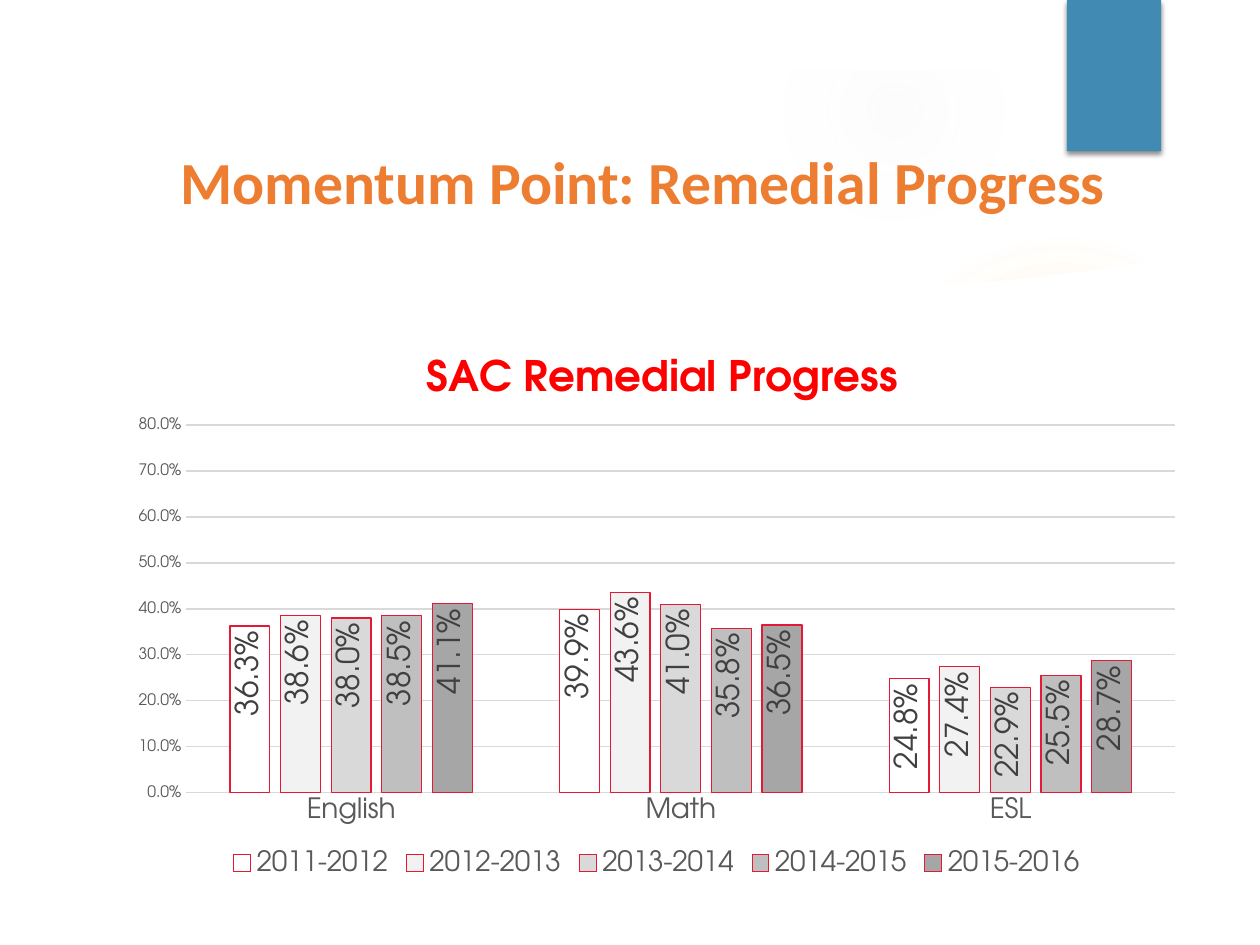
from dataclasses import dataclass

from lxml.etree import SubElement
from pptx import Presentation
from pptx.chart.data import CategoryChartData
from pptx.dml.color import RGBColor
from pptx.enum.chart import XL_CHART_TYPE as ChartType
from pptx.enum.chart import XL_LABEL_POSITION as LabelPos
from pptx.enum.chart import XL_LEGEND_POSITION as LegendPos
from pptx.enum.chart import XL_TICK_MARK as Tick
from pptx.enum.shapes import MSO_SHAPE as Shape
from pptx.enum.text import MSO_ANCHOR as Anchor
from pptx.enum.text import PP_ALIGN as Align
from pptx.oxml import parse_xml
from pptx.oxml.ns import qn
from pptx.util import Cm, Pt

A_NS = 'xmlns:a="http://schemas.openxmlformats.org/drawingml/2006/main"'


@dataclass(frozen=True)
class Theme:
    head_font: str = "Calibri"
    body_font: str = "TeX Gyre Adventor"
    paper: str = "FFFFFF"
    accent: str = "418AB3"
    glow: str = "FEC306"
    mist: str = "F1F1F1"
    heading: str = "ED7D31"
    chart_title: str = "FF0000"
    muted: str = "595959"
    label: str = "404040"
    grid: str = "D9D9D9"
    outline: str = "E31936"
    bars: tuple = ("FFFFFF", "F2F2F2", "D9D9D9", "BFBFBF", "A6A6A6")
    heading_size: float = 34.1
    chart_title_size: float = 24
    label_size: float = 18
    text_size: float = 16
    tick_size: float = 9
    rule: float = 0.75


def set_all(obj, **values):
    for name, value in values.items():
        setattr(obj, name, value)


def set_font(font, face, size, color, bold=False):
    set_all(font, name=face, size=Pt(size), bold=bold)
    font.color.rgb = RGBColor.from_string(color)


def set_line(fmt, color, width):
    fmt.line.color.rgb = RGBColor.from_string(color)
    fmt.line.width = Pt(width)


def set_layout(parent, before, **fractions):
    """Place a chart part by fractions of the chart area."""
    layout = parent.find(qn("c:layout"))
    if layout is None:
        layout = parent.makeelement(qn("c:layout"))
        parent.find(qn(before)).addprevious(layout)
    manual = SubElement(layout, qn("c:manualLayout"))
    if "w" in fractions:
        SubElement(manual, qn("c:layoutTarget")).set("val", "inner")
    for side in "xy":
        SubElement(manual, qn(f"c:{side}Mode")).set("val", "edge")
    for name, value in fractions.items():
        SubElement(manual, qn(f"c:{name}")).set("val", str(value))


class SlideBuilder:
    def __init__(self, slide, theme):
        self.s, self.t = slide, theme

    def finish(self, sp, color):
        sp.shadow.inherit = False
        sp.line.fill.background()
        if color:
            sp.fill.solid()
            sp.fill.fore_color.rgb = RGBColor.from_string(color)
        return sp

    def shape(self, kind, box, color=None):
        sp = self.s.shapes.add_shape(kind, *map(Cm, box))
        return self.finish(sp, color)

    def glow(self, box, color, stops):
        """Circle that fades outwards; stops are (position %, opacity %)."""
        sp = self.shape(Shape.OVAL, box)
        gs = "".join(
            f'<a:gs pos="{pos * 1000}"><a:srgbClr val="{color}">'
            f'<a:alpha val="{alpha * 1000}"/></a:srgbClr></a:gs>'
            for pos, alpha in stops)
        grad = parse_xml(
            f'<a:gradFill {A_NS}><a:gsLst>{gs}</a:gsLst><a:path path="circle">'
            '<a:fillToRect l="50000" t="50000" r="50000" b="50000"/>'
            '</a:path></a:gradFill>')
        sp._element.spPr.find(qn("a:prstGeom")).addnext(grad)

    def outline(self, points, color):
        start, *rest = [(Cm(x), Cm(y)) for x, y in points]
        fb = self.s.shapes.build_freeform(*start)
        fb.add_line_segments(rest, close=True)
        self.finish(fb.convert_to_shape(), color)

    def frame(self, box, border, color):
        sp = self.shape(Shape.FRAME, box, color)
        sp.adjustments[0] = border / min(box[2:])

    def tab(self, box, color):
        """Solid block with a soft shadow below it."""
        sp = self.shape(Shape.RECTANGLE, box, color)
        effects = sp._element.spPr.find(qn("a:effectLst"))
        effects.append(parse_xml(
            f'<a:outerShdw {A_NS} blurRad="{Pt(3)}" dist="{Pt(2)}" dir="5400000" '
            'algn="t" rotWithShape="0"><a:srgbClr val="000000">'
            '<a:alpha val="45000"/></a:srgbClr></a:outerShdw>'))

    def title(self, box, text):
        tf = self.s.shapes.add_textbox(*map(Cm, box)).text_frame
        set_all(tf, word_wrap=True, vertical_anchor=Anchor.MIDDLE,
                margin_left=Cm(0.25), margin_right=Cm(0.13),
                margin_top=Cm(0.13), margin_bottom=Cm(0.13))
        p = tf.paragraphs[0]
        p.alignment = Align.CENTER
        r = p.add_run()
        r.text = text
        set_font(r.font, self.t.head_font, self.t.heading_size, self.t.heading, True)

    def column_chart(self, box, title, cats, series):
        t = self.t
        data = CategoryChartData(number_format="0.0%")
        data.categories = cats
        for name, values in series.items():
            data.add_series(name, values)
        chart = self.s.shapes.add_chart(
            ChartType.COLUMN_CLUSTERED, *map(Cm, box), data).chart
        set_font(chart.font, t.body_font, 10, "000000")

        p = chart.chart_title.text_frame.paragraphs[0]
        r = p.add_run()
        r.text = title
        set_font(r.font, t.body_font, t.chart_title_size, t.chart_title, True)
        chart.chart_title.include_in_layout = False
        set_layout(chart.chart_title._element, "c:overlay", x=0.28, y=0.04)

        chart.has_legend = True
        set_all(chart.legend, position=LegendPos.BOTTOM, include_in_layout=False)
        set_font(chart.legend.font, t.body_font, t.text_size, t.muted)

        self.style_axes(chart.category_axis, chart.value_axis)
        plot = chart.plots[0]
        set_all(plot, gap_width=219, overlap=-27, vary_by_categories=False)
        set_layout(plot._element.getparent(), "c:barChart",
                   x=0.065, y=0.18, w=0.915, h=0.66)
        for ser, color in zip(plot.series, t.bars):
            self.style_series(ser, color)

    def style_axes(self, cat, val):
        t = self.t
        for axis, size in ((cat, t.text_size), (val, t.tick_size)):
            set_all(axis, major_tick_mark=Tick.NONE, minor_tick_mark=Tick.NONE)
            set_font(axis.tick_labels.font, t.body_font, size, t.muted)
        set_line(cat.format, t.grid, t.rule)
        set_all(val, minimum_scale=0, maximum_scale=0.8, major_unit=0.1,
                has_major_gridlines=True)
        set_all(val.tick_labels, number_format="0.0%", number_format_is_linked=False)
        set_line(val.major_gridlines.format, t.grid, t.rule)
        val.format.line.fill.background()

    def style_series(self, ser, color):
        t = self.t
        ser.format.fill.solid()
        ser.format.fill.fore_color.rgb = RGBColor.from_string(color)
        set_line(ser.format, t.outline, t.rule)
        labels = ser.data_labels
        set_all(labels, show_value=True, position=LabelPos.INSIDE_END,
                number_format="0.0%", number_format_is_linked=False)
        set_font(labels.font, t.body_font, t.label_size, t.label)
        body = labels._element.find(qn("c:txPr")).find(qn("a:bodyPr"))
        body.set("rot", "-5400000")
        body.set("vert", "horz")


def main():
    prs = Presentation()
    prs.slide_width, prs.slide_height = Cm(25.4), Cm(19.05)
    t = Theme()
    b = SlideBuilder(prs.slides.add_slide(prs.slide_layouts[6]), t)

    b.glow((17.5, 4.65, 7.82, 7.82), t.glow, [(0, 7), (36, 6), (69, 0)])
    b.glow((15.8, 0, 4.45, 4.45), t.mist, [(0, 14), (36, 7), (73, 0)])
    b.outline([(1.35, 17.75), (1.35, 5.16), (4.39, 5.51), (6.32, 5.69),
               (8.59, 5.84), (11.15, 5.94), (13.92, 5.94), (15.88, 5.92),
               (17.88, 5.82), (19.94, 5.69), (21.99, 5.46), (24.05, 5.16),
               (24.05, 17.75)], t.paper)
    b.frame((0, 0, 25.4, 19.05), 1.42, t.paper)
    b.tab((21.51, 0, 1.9, 3.05), t.accent)
    b.title((1.47, 1.9, 22.86, 3.48), "Momentum Point: Remedial Progress")
    b.column_chart(
        (2.34, 6.55, 21.79, 11.23), "SAC Remedial Progress",
        ["English", "Math", "ESL"],
        {"2011-2012": (0.363, 0.399, 0.248),
         "2012-2013": (0.386, 0.436, 0.274),
         "2013-2014": (0.38, 0.41, 0.229),
         "2014-2015": (0.385, 0.358, 0.255),
         "2015-2016": (0.411, 0.365, 0.287)})
    prs.save("out.pptx")


if __name__ == "__main__":
    main()
